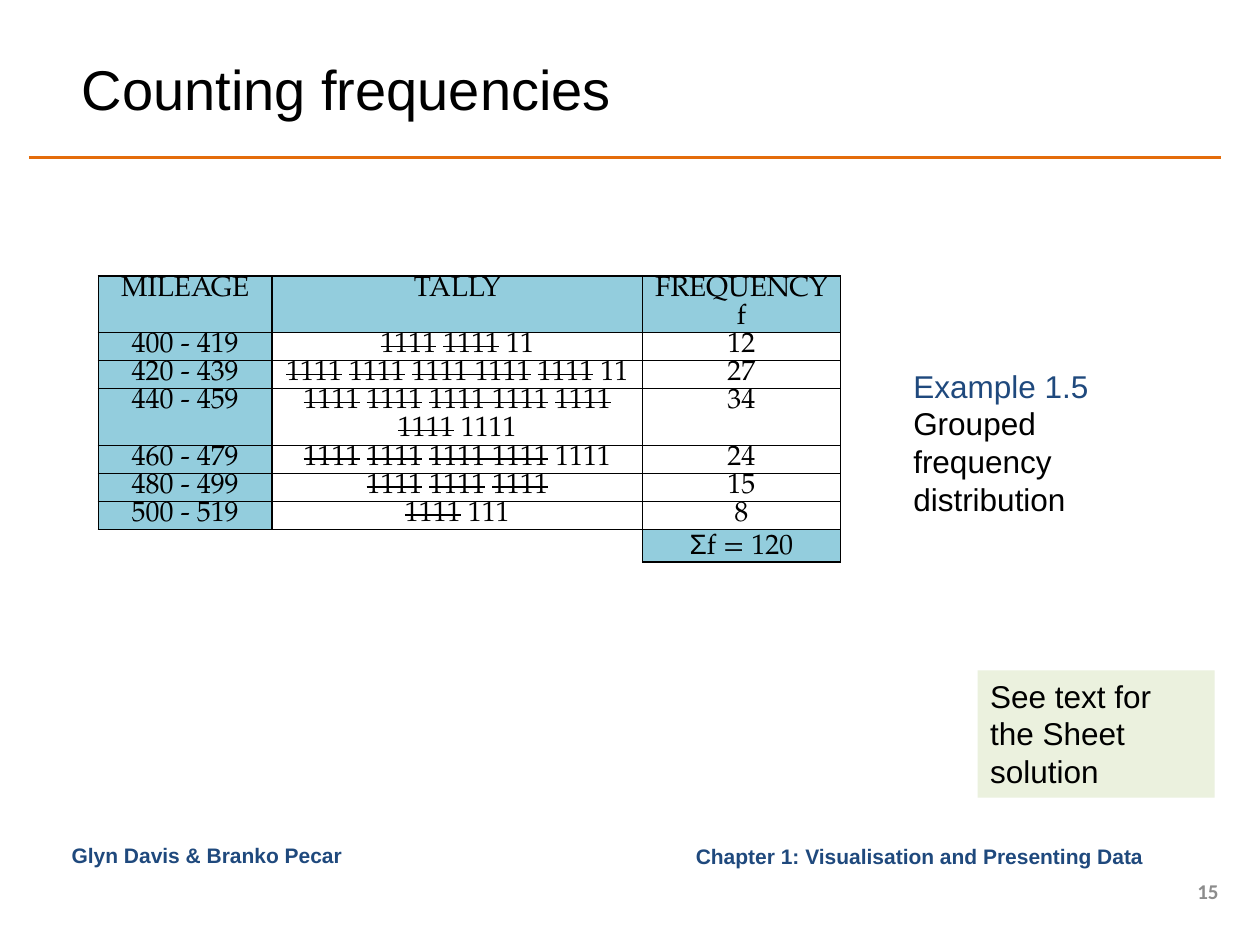
from dataclasses import dataclass

from lxml import etree
from pptx import Presentation
from pptx.dml.color import RGBColor
from pptx.enum.shapes import MSO_CONNECTOR, MSO_SHAPE
from pptx.enum.text import MSO_ANCHOR, PP_ALIGN
from pptx.oxml.ns import qn
from pptx.util import Inches, Pt

LEFT, CENTER, RIGHT = PP_ALIGN.LEFT, PP_ALIGN.CENTER, PP_ALIGN.RIGHT
TOP, MIDDLE = MSO_ANCHOR.TOP, MSO_ANCHOR.MIDDLE
BLACK, NAVY, GREY = "000000", "1F497D", "8C8C8C"
ORANGE, BLUE, PALE_GREEN = "E46C0A", "93CDDD", "EBF1DE"
SERIF = "TeX Gyre Pagella"


@dataclass(frozen=True)
class Words:
    text: str
    size: float
    color: str = BLACK
    font: str = "Arial"
    bold: bool = False
    struck: bool = False


@dataclass(frozen=True)
class Label:
    box: tuple[float, float, float, float]
    words: tuple[Words, ...]
    align: PP_ALIGN = LEFT
    anchor: MSO_ANCHOR = TOP
    fill: str | None = None


@dataclass(frozen=True)
class TallyRow:
    """One class of mileages; tally marks between tildes are struck through."""
    mileage: str
    tally: str
    frequency: str
    height: float = 0.22


LABELS = (
    Label((4.69, 6.64, 4.53, 0.31),
          (Words("Chapter 1: Visualisation and Presenting Data ", 12, NAVY, bold=True),),
          RIGHT, MIDDLE),
    Label((0.55, 0.31, 7.58, 0.78), (Words("Counting frequencies", 32),), anchor=MIDDLE),
    Label((9.3, 6.95, 0.47, 0.24), (Words("15", 12, GREY, "Calibri", True),), RIGHT, MIDDLE),
    Label((0.47, 6.64, 2.97, 0.31),
          (Words("Glyn Davis & Branko Pecar", 12, NAVY, bold=True),)),
    Label((7.15, 2.86, 1.95, 1.31),
          (Words("Example 1.5", 18, NAVY), Words(" Grouped frequency distribution", 18))),
    Label((7.76, 5.32, 1.88, 1.01),
          (Words("See text for the Sheet solution", 18),), fill=PALE_GREEN),
)

COLUMN_WIDTHS = (1.38, 2.94, 1.57)
TALLY_ROWS = (
    TallyRow("MILEAGE", "TALLY", "FREQUENCY\nf", 0.45),
    TallyRow("400 - 419", "~1111~ ~1111~ 11", "12"),
    TallyRow("420 - 439", "~1111~ ~1111~ ~1111 1111~ ~1111~ 11", "27"),
    TallyRow("440 - 459", "~1111~ ~1111~ ~1111 1111~ ~1111~ ~1111~ 1111", "34", 0.45),
    TallyRow("460 - 479", "~1111~ ~1111~ ~1111 1111~ 1111", "24"),
    TallyRow("480 - 499", "~1111~ ~1111~ ~1111~", "15"),
    TallyRow("500 - 519", "~1111~ 111", "8"),
)
TOTAL = (Words("Σ", 16), Words("f = 120", 16, font=SERIF))
TOTAL_HEIGHT = 0.26


def rgb(color: str) -> RGBColor:
    return RGBColor.from_string(color)


def add_words(paragraph, words: tuple[Words, ...]) -> None:
    for part in words:
        run = paragraph.add_run()
        run.text = part.text
        run.font.size = Pt(part.size)
        run.font.name = part.font
        run.font.bold = part.bold
        run.font.color.rgb = rgb(part.color)
        if part.struck:
            run._r.get_or_add_rPr().set("strike", "sngStrike")


def add_label(slide, label: Label) -> None:
    box = [Inches(length) for length in label.box]
    if label.fill:
        shape = slide.shapes.add_shape(MSO_SHAPE.RECTANGLE, *box)
        shape.shadow.inherit = False
        shape.fill.solid()
        shape.fill.fore_color.rgb = rgb(label.fill)
        shape.line.fill.background()
    else:
        shape = slide.shapes.add_textbox(*box)
    frame = shape.text_frame
    frame.word_wrap = True
    frame.vertical_anchor = label.anchor
    paragraph = frame.paragraphs[0]
    paragraph.alignment = label.align
    add_words(paragraph, label.words)


def add_title_rule(slide) -> None:
    rule = slide.shapes.add_connector(
        MSO_CONNECTOR.STRAIGHT, Inches(0.23), Inches(1.25), Inches(9.69), Inches(1.25))
    rule.line.color.rgb = rgb(ORANGE)
    rule.line.width = Pt(2)
    etree.SubElement(rule._element.spPr, qn("a:effectLst"))


def style_cell(cell, fill: str | None, sides: str) -> None:
    """Fill the cell and rule the sides named by the letters L, R, T and B."""
    cell.margin_left = cell.margin_right = Inches(0.07)
    cell.margin_top = cell.margin_bottom = 0
    if fill:
        cell.fill.solid()
        cell.fill.fore_color.rgb = rgb(fill)
    else:
        cell.fill.background()
    properties = cell._tc.get_or_add_tcPr()
    for position, side in enumerate("LRTB"):
        border = etree.Element(qn(f"a:ln{side}"), w=str(Pt(1)))
        if side in sides:
            paint = etree.SubElement(border, qn("a:solidFill"))
            etree.SubElement(paint, qn("a:srgbClr"), val=BLACK)
        else:
            etree.SubElement(border, qn("a:noFill"))
        properties.insert(position, border)


def write_cell(cell, lines: list[tuple[Words, ...]], spacing: float = 16) -> None:
    frame = cell.text_frame
    for index, words in enumerate(lines):
        paragraph = frame.add_paragraph() if index else frame.paragraphs[0]
        paragraph.alignment = CENTER
        paragraph.line_spacing = Pt(spacing)
        add_words(paragraph, words)


def tally_words(text: str) -> tuple[Words, ...]:
    return tuple(Words(part, 16, font=SERIF, struck=index % 2 == 1)
                 for index, part in enumerate(text.split("~")) if part)


def add_tally_table(slide) -> None:
    heights = [row.height for row in TALLY_ROWS] + [TOTAL_HEIGHT]
    table = slide.shapes.add_table(
        len(heights), len(COLUMN_WIDTHS), Inches(0.78), Inches(2.19),
        Inches(sum(COLUMN_WIDTHS)), Inches(sum(heights))).table
    table.first_row = table.horz_banding = False
    for column, width in zip(table.columns, COLUMN_WIDTHS):
        column.width = Inches(width)
    for table_row, height in zip(table.rows, heights):
        table_row.height = Inches(height)

    for r, row in enumerate(TALLY_ROWS):
        for c, text in enumerate((row.mileage, row.tally, row.frequency)):
            cell = table.cell(r, c)
            style_cell(cell, BLUE if r == 0 or c == 0 else None, "LRTB")
            write_cell(cell, [tally_words(line) for line in text.split("\n")])

    last = len(TALLY_ROWS)
    for c, (fill, sides) in enumerate(((None, "T"), (None, "TR"), (BLUE, "LRTB"))):
        style_cell(table.cell(last, c), fill, sides)
    for c in (0, 1):
        table.cell(last, c).text_frame.paragraphs[0].font.size = Pt(8)
    write_cell(table.cell(last, 2), [TOTAL], spacing=18.5)


def main() -> None:
    deck = Presentation()
    deck.slide_width, deck.slide_height = Inches(10), Inches(7.5)
    slide = deck.slides.add_slide(deck.slide_layouts[6])
    add_title_rule(slide)
    add_tally_table(slide)
    for label in LABELS:
        add_label(slide, label)
    deck.save("out.pptx")


if __name__ == "__main__":
    main()
